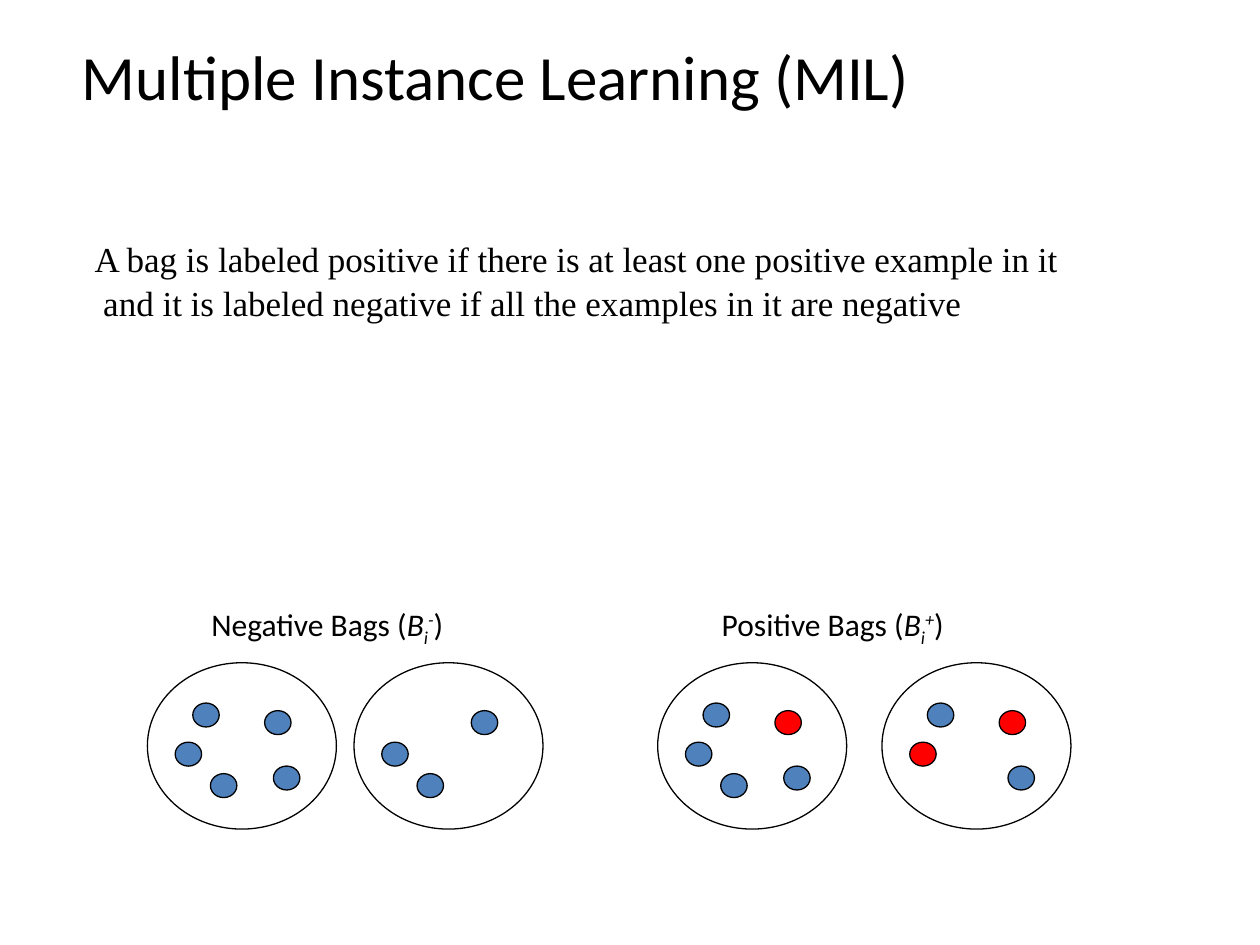
from pptx import Presentation
from pptx.dml.color import RGBColor
from pptx.enum import shapes, text
from pptx.util import Inches, Pt

THEME = {
    "ink": RGBColor(0, 0, 0),
    "neg": RGBColor(0x4F, 0x81, 0xBD),
    "pos": RGBColor(0xFF, 0, 0),
    "sans": "Calibri", "serif": "Times New Roman",
    "title": 36, "body": 20, "label": 18, "line": 0.75,
}

TITLE = "Multiple Instance Learning (MIL)"
RULE = [
    "A bag is labeled positive if there is at least one positive example in it",
    " and it is labeled negative if all the examples in it are negative",
]
# Label box (left, width), name and sign
LABELS = [((1.58, 2.34), "Negative", "-"), ((5.63, 2.27), "Positive", "+")]

# Places an example can take, measured from the corner of its bag
SPOTS = {"top": (0.36, 0.32), "low": (0.5, 0.88), "right": (0.93, 0.38),
         "corner": (1, 0.82), "left": (0.22, 0.63)}
# Left edge of a bag, its examples, and which of them are positive
BAGS = [
    (1.17, ["top", "low", "right", "corner", "left"], []),
    (2.81, ["low", "right", "left"], []),
    (5.22, ["top", "low", "right", "corner", "left"], ["right"]),
    (7, ["top", "right", "corner", "left"], ["right", "left"]),
]
BAG_TOP, BAG_SIZE, DOT_SIZE = 5.26, (1.5, 1.32), (0.21, 0.19)


def style(run, size, face):
    run.font.size = Pt(size)
    run.font.name = face
    run.font.color.rgb = THEME["ink"]


def add_text(slide, box, lines, size, face, pad=0, wrap=True):
    """Add a text box; each line is a list of its runs."""
    frame = slide.shapes.add_textbox(*map(Inches, box)).text_frame
    frame.word_wrap = wrap
    frame.vertical_anchor = text.MSO_ANCHOR.TOP
    if wrap:
        frame.margin_left = frame.margin_right = frame.margin_bottom = 0
        frame.margin_top = Inches(pad)
    for n, line in enumerate(lines):
        para = frame.add_paragraph() if n else frame.paragraphs[0]
        for part in line:
            run = para.add_run()
            run.text = part
            style(run, size, face)
    return frame


def add_label(slide, span, name, sign):
    left, width = span
    parts = [f"{name} Bags (", "B", "i", sign, ")"]
    frame = add_text(slide, (left, 4.75, width, 0.4), [parts],
                     THEME["label"], THEME["sans"], wrap=False)
    runs = frame.paragraphs[0].runs
    for run in runs[1:4]:
        run.font.italic = True
    for run, shift in zip(runs[2:4], ("-25000", "30000")):
        run.font._element.set("baseline", shift)


def add_oval(group, left, top, size, fill=None):
    oval = group.shapes.add_shape(shapes.MSO_SHAPE.OVAL,
                                  *map(Inches, (left, top, *size)))
    oval.shadow.inherit = False
    oval.line.color.rgb = THEME["ink"]
    oval.line.width = Pt(THEME["line"])
    if fill is None:
        oval.fill.background()
    else:
        oval.fill.solid()
        oval.fill.fore_color.rgb = fill


def add_bag(slide, left, spots, hits):
    group = slide.shapes.add_group_shape()
    add_oval(group, left, BAG_TOP, BAG_SIZE)
    for spot in spots:
        dx, dy = SPOTS[spot]
        fill = THEME["pos" if spot in hits else "neg"]
        add_oval(group, left + dx, BAG_TOP + dy, DOT_SIZE, fill)


def main():
    deck = Presentation()
    deck.slide_width, deck.slide_height = Inches(10), Inches(7.5)
    slide = deck.slides.add_slide(deck.slide_layouts[6])
    add_text(slide, (0.65, 0.3, 7.85, 0.59), [[TITLE]],
             THEME["title"], THEME["sans"])
    rule = add_text(slide, (0.75, 1.2, 8.25, 2.54), [[s] for s in RULE],
                    THEME["body"], THEME["serif"], pad=0.69)
    for para in rule.paragraphs:
        para.space_before = Pt(1)
    for bag in BAGS:
        add_bag(slide, *bag)
    for label in LABELS:
        add_label(slide, *label)
    deck.save("out.pptx")


if __name__ == "__main__":
    main()
